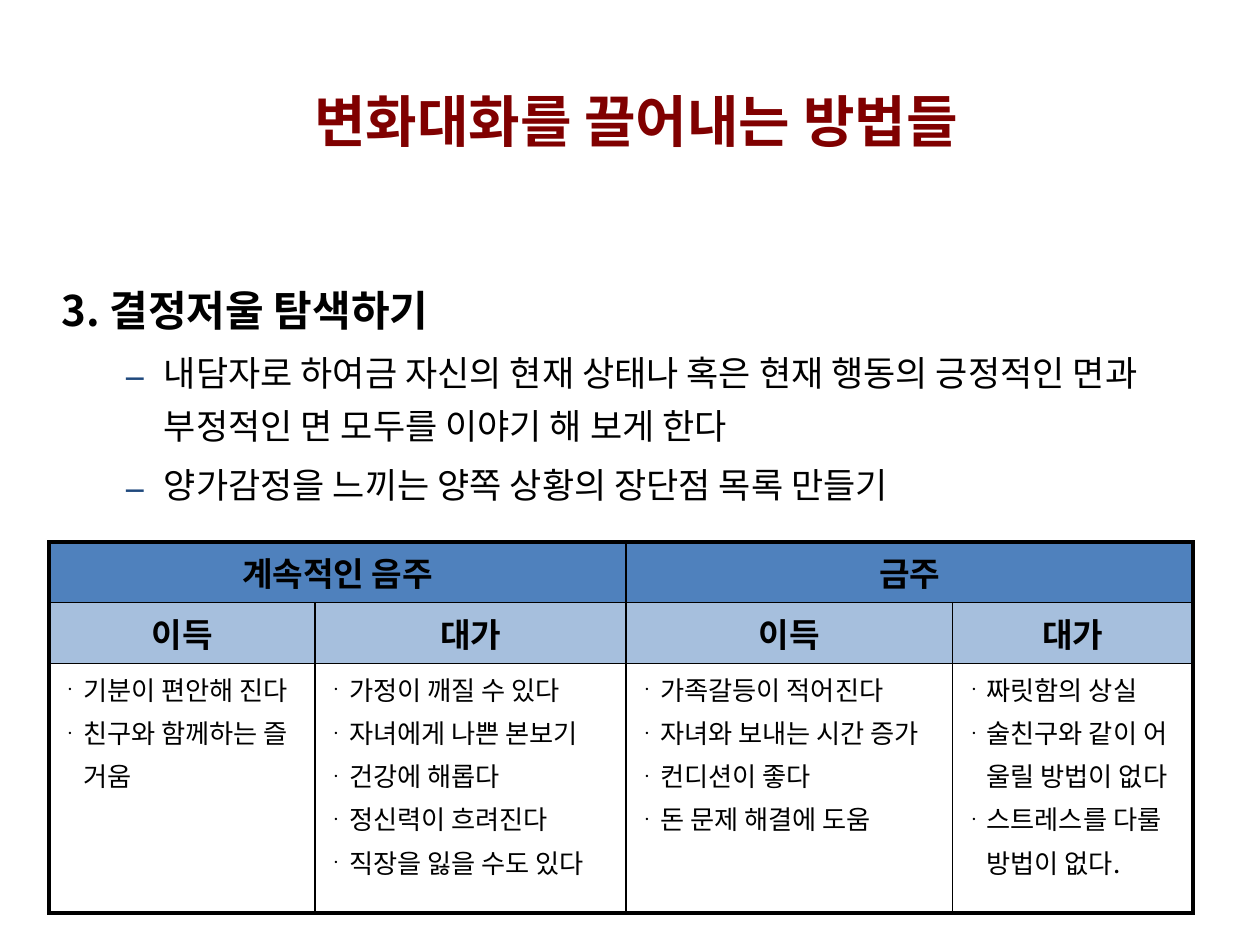
from lxml.etree import SubElement
from pptx import Presentation
from pptx.dml.color import RGBColor
from pptx.enum.text import MSO_ANCHOR, MSO_AUTO_SIZE, PP_ALIGN
from pptx.oxml.ns import qn
from pptx.util import Inches, Pt

FONT = "Noto Sans CJK KR"
BLACK, MAROON, NAVY, BLUE = "000000", "800000", "1F497D", "4F81BD"
THIN, THICK = 1, 2.25

TITLE = "변화대화를 끌어내는 방법들"
HEADING = "3. 결정저울 탐색하기"
POINTS = [
    "내담자로 하여금 자신의 현재 상태나 혹은 현재 행동의 긍정적인 면과 "
    "부정적인 면 모두를 이야기 해 보게 한다",
    "양가감정을 느끼는 양쪽 상황의 장단점 목록 만들기",
]
CHOICES = ["계속적인 음주", "금주"]
SIDES = ["이득", "대가"]
# A line feed marks where an entry continues on an unbulleted line.
ENTRIES = [
    ["기분이 편안해 진다", "친구와 함께하는 즐\n거움"],
    ["가정이 깨질 수 있다", "자녀에게 나쁜 본보기", "건강에 해롭다",
     "정신력이 흐려진다", "직장을 잃을 수도 있다"],
    ["가족갈등이 적어진다", "자녀와 보내는 시간 증가", "컨디션이 좋다",
     "돈 문제 해결에 도움"],
    ["짜릿함의 상실", "술친구와 같이 어\n울릴 방법이 없다",
     "스트레스를 다룰\n방법이 없다."],
]


def color(code):
    return RGBColor.from_string(code)


def assign(target, values):
    for name, value in values.items():
        setattr(target, name, value)


class SlideBuilder:
    def __init__(self, slide, font):
        self.slide = slide
        self.font = font

    def place(self, shape, left, top, width, height):
        assign(shape, {"left": Inches(left), "top": Inches(top),
                       "width": Inches(width), "height": Inches(height)})
        assign(shape.text_frame, {"word_wrap": True,
                                  "auto_size": MSO_AUTO_SIZE.NONE,
                                  "vertical_anchor": MSO_ANCHOR.MIDDLE})
        return shape.text_frame

    def add_text(self, paragraph, text, size, bold=False, ink=BLACK, **layout):
        assign(paragraph, layout)
        run = paragraph.add_run()
        run.text = text
        assign(run.font, {"name": self.font, "size": Pt(size), "bold": bold})
        run.font.color.rgb = color(ink)
        SubElement(run.font._element, qn("a:ea"), typeface=self.font)

    def indent(self, paragraph, margin, hanging, bullet=None, ink=BLACK, percent=100):
        """Hang the paragraph, with a bullet character or with none."""
        properties = paragraph._p.get_or_add_pPr()
        properties.set("marL", str(Inches(margin)))
        properties.set("indent", str(-Inches(hanging)))
        if bullet is None:
            SubElement(properties, qn("a:buNone"))
            return
        tint = SubElement(properties, qn("a:buClr"))
        SubElement(tint, qn("a:srgbClr"), val=ink)
        SubElement(properties, qn("a:buSzPct"), val=str(percent * 1000))
        SubElement(properties, qn("a:buFont"), typeface=self.font)
        SubElement(properties, qn("a:buChar"), char=bullet)

    def title(self, text, *box):
        frame = self.place(self.slide.shapes.title, *box)
        self.add_text(frame.paragraphs[0], text, 32, True, MAROON,
                      alignment=PP_ALIGN.CENTER)

    def body(self, heading, points, *box):
        frame = self.place(self.slide.placeholders[1], *box)
        first = frame.paragraphs[0]
        self.add_text(first, heading, 24, True, line_spacing=1.25, space_before=Pt(4))
        self.indent(first, 0.5, 0.5)
        for point in points:
            paragraph = frame.add_paragraph()
            self.add_text(paragraph, point, 20, level=1, line_spacing=1.25,
                          space_before=Pt(4))
            self.indent(paragraph, 0.81, 0.31, "–", NAVY, 115)

    def table(self, left, top, widths, heights):
        table = self.slide.shapes.add_table(
            len(heights), len(widths), Inches(left), Inches(top),
            Inches(sum(widths)), Inches(sum(heights))).table
        assign(table, {"first_row": False, "horz_banding": False})
        for column, width in zip(table.columns, widths):
            column.width = Inches(width)
        for row, height in zip(table.rows, heights):
            row.height = Inches(height)
        return table

    def borders(self, table):
        """Draw a thick frame around the table and thin lines inside."""
        last_row, last_column = len(table.rows) - 1, len(table.columns) - 1
        for r in range(last_row + 1):
            for c in range(last_column + 1):
                cell = table.cell(r, c)
                right = c + (cell.span_width if cell.is_merge_origin else 1) - 1
                edges = {"L": c == 0, "R": right == last_column,
                         "T": r == 0, "B": r == last_row}
                properties = cell._tc.get_or_add_tcPr()
                for side, outer in edges.items():
                    line = SubElement(properties, qn(f"a:ln{side}"),
                                      w=str(Pt(THICK if outer else THIN)))
                    fill = SubElement(line, qn("a:solidFill"))
                    SubElement(fill, qn("a:srgbClr"), val=BLACK)
                cell.fill.background()

    def header_cell(self, cell, text, opacity=100):
        cell.fill.solid()
        cell.fill.fore_color.rgb = color(BLUE)
        if opacity < 100:
            shade = cell._tc.tcPr.find(qn("a:solidFill")).find(qn("a:srgbClr"))
            SubElement(shade, qn("a:alpha"), val=str(opacity * 1000))
        self.add_text(cell.text_frame.paragraphs[0], text, 19, True,
                      alignment=PP_ALIGN.CENTER, space_before=Pt(3.8))

    def list_cell(self, cell, entries):
        frame = cell.text_frame
        lines = [(line, "ㆍ" if i == 0 else None)
                 for entry in entries for i, line in enumerate(entry.split("\n"))]
        for i, (line, bullet) in enumerate(lines):
            paragraph = frame.add_paragraph() if i else frame.paragraphs[0]
            self.add_text(paragraph, line, 15, space_before=Pt(3))
            self.indent(paragraph, 0.17, 0.17 if bullet else 0, bullet, percent=73)


def main():
    deck = Presentation()
    assign(deck, {"slide_width": Inches(10), "slide_height": Inches(7.5)})
    builder = SlideBuilder(deck.slides.add_slide(deck.slide_layouts[1]), FONT)

    builder.title(TITLE, 0.55, 0.23, 9, 1.45)
    builder.body(HEADING, POINTS, 0.39, 1.64, 9.3, 2.89)

    balance = builder.table(0.39, 4.3, [2.11, 2.47, 2.59, 1.91], [0.47, 0.47, 1.98])
    for i in range(len(CHOICES)):
        balance.cell(0, 2 * i).merge(balance.cell(0, 2 * i + 1))
    builder.borders(balance)
    for i, choice in enumerate(CHOICES):
        builder.header_cell(balance.cell(0, 2 * i), choice)
    for c, entries in enumerate(ENTRIES):
        builder.header_cell(balance.cell(1, c), SIDES[c % 2], opacity=50)
        builder.list_cell(balance.cell(2, c), entries)

    deck.save("out.pptx")


if __name__ == "__main__":
    main()
